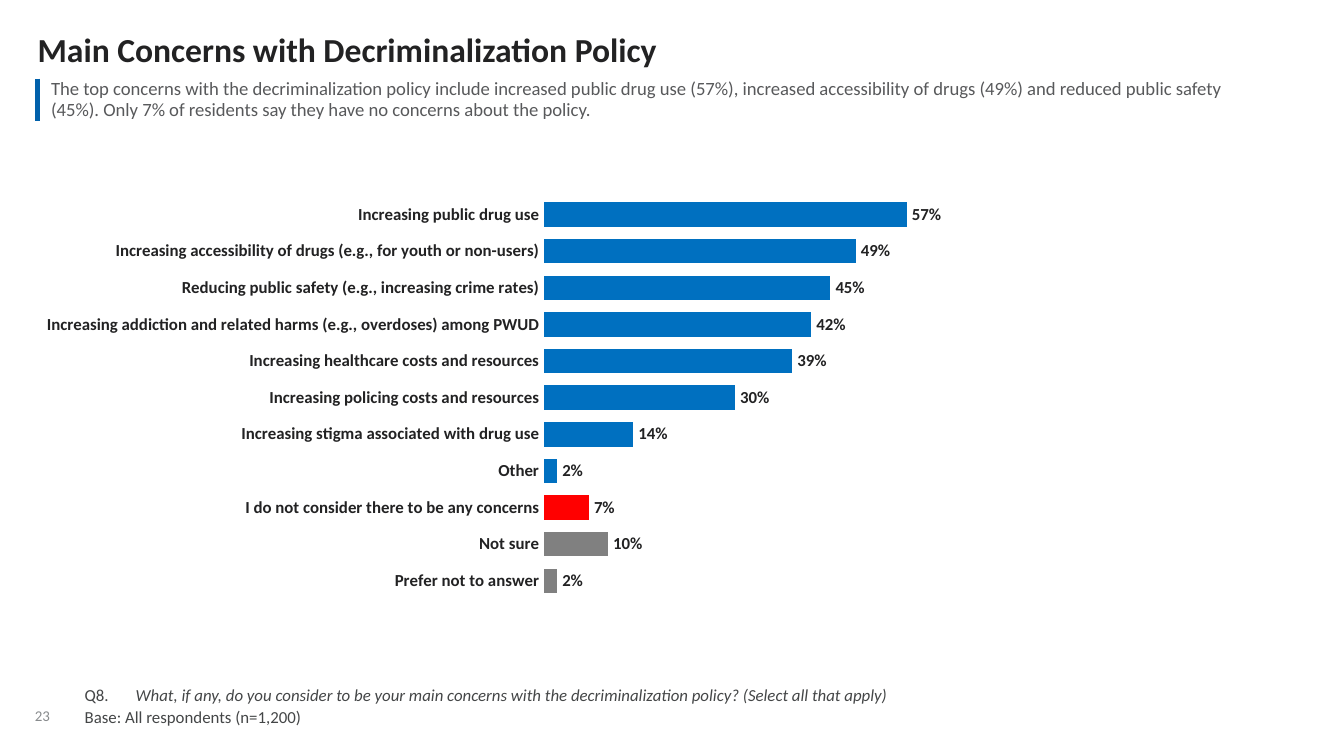
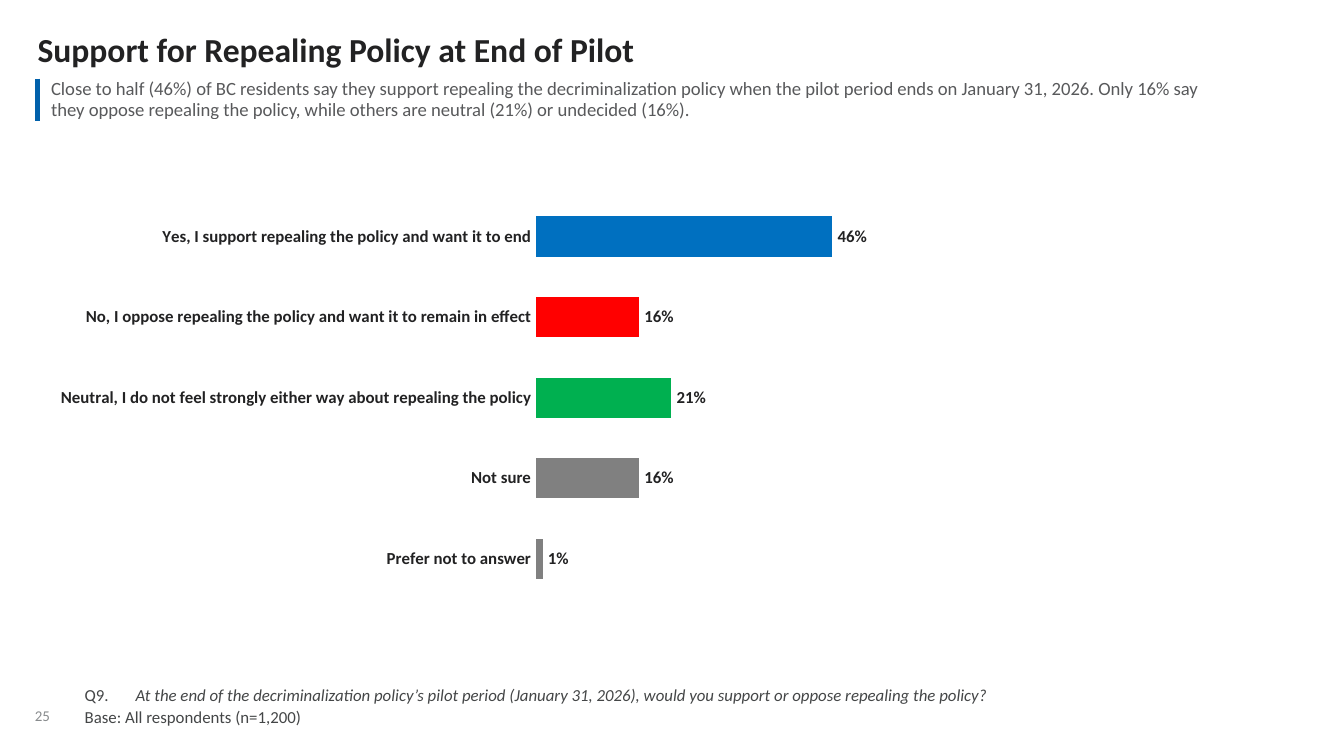
import dataclasses

import lxml.etree
import pptx
import pptx.chart.data
import pptx.dml.color
import pptx.enum.chart
import pptx.enum.text
import pptx.oxml
import pptx.oxml.ns
import pptx.util

Inches = pptx.util.Inches
Pt = pptx.util.Pt
qn = pptx.oxml.ns.qn
Anchor = pptx.enum.text.MSO_ANCHOR


@dataclasses.dataclass(frozen=True)
class Theme:
    font: str = "Calibri"
    ink: str = "222223"
    note: str = "444647"
    lead: str = "58595B"
    page: str = "888B8D"
    bar: str = "0161AB"
    white: str = "FFFFFF"
    blue: str = "0070C0"
    red: str = "FF0000"
    green: str = "00B050"
    gray: str = "808080"
    title_size: int = 18
    lead_size: int = 10
    text_size: int = 9
    page_size: int = 8


THEME = Theme()
LEFT = 0.28
CHART_WIDTH = 8.5
BASE = "Base: All respondents (n=1,200)"


def tint(code):
    return pptx.dml.color.RGBColor.from_string(code)


def style(font, size, color, bold=False, italic=False):
    font.name = THEME.font
    font.size = Pt(size)
    font.color.rgb = tint(color)
    font.bold = bold
    font.italic = italic


def write(para, text, size=THEME.text_size, color=THEME.ink, bold=False,
          italic=False, space=0.9, after=0):
    """Add one run to the paragraph and set its spacing."""
    para.alignment = pptx.enum.text.PP_ALIGN.LEFT
    para.line_spacing = space
    para.space_before = Pt(0)
    para.space_after = Pt(after)
    run = para.add_run()
    run.text = text
    style(run.font, size, color, bold, italic)


def place(shape, left, top, width, height):
    shape.left, shape.top = Inches(left), Inches(top)
    shape.width, shape.height = Inches(width), Inches(height)


def set_frame(frame, anchor, wrap=True):
    """Clear the margins, anchor the text and return the first paragraph."""
    frame.margin_left = frame.margin_right = 0
    frame.margin_top = frame.margin_bottom = 0
    frame.auto_size = pptx.enum.text.MSO_AUTO_SIZE.NONE
    frame.vertical_anchor = anchor
    frame.word_wrap = wrap
    return frame.paragraphs[0]


def add_title(slide, text):
    title = slide.shapes.title
    place(title, LEFT, 0.25, 9.46, 0.27)
    para = set_frame(title.text_frame, Anchor.TOP)
    write(para, text, size=THEME.title_size, bold=True)


def add_page(slide, number):
    box = slide.shapes.add_textbox(
        Inches(0.26), Inches(5.13), Inches(0.34), Inches(0.26))
    para = set_frame(box.text_frame, Anchor.BOTTOM, wrap=False)
    write(para, str(number), size=THEME.page_size, color=THEME.page, space=0.85)


def hang(para):
    """Give the paragraph a hanging indent and no bullet."""
    props = para._p.get_or_add_pPr()
    props.set("marL", str(Inches(0.38)))
    props.set("indent", str(-Inches(0.38)))
    lxml.etree.SubElement(props, qn("a:buNone"))


def add_note(slide, label, question):
    body = slide.placeholders[1]
    place(body, 0.63, 5.1, 8.4, 0.31)
    first = set_frame(body.text_frame, Anchor.BOTTOM)
    last = body.text_frame.add_paragraph()
    hang(first)
    hang(last)
    look = {"color": THEME.note, "after": 2}
    write(first, label + "\t", **look)
    write(first, question, italic=True, **look)
    write(last, BASE, **look)


def edge(cell, tag, index, color, width):
    """Draw one side of a table cell."""
    line = lxml.etree.Element(qn(tag), w=str(Pt(width)))
    fill = lxml.etree.SubElement(line, qn("a:solidFill"))
    lxml.etree.SubElement(fill, qn("a:srgbClr"), val=color)
    cell._tc.get_or_add_tcPr().insert(index, line)


def add_lead(slide, text):
    table = slide.shapes.add_table(
        1, 1, Inches(LEFT), Inches(0.59), Inches(9), Inches(0.2)).table
    table.first_row = table.horz_banding = False
    cell = table.cell(0, 0)
    cell.fill.background()
    cell.margin_left = cell.margin_right = Inches(0.1)
    cell.margin_top = cell.margin_bottom = 0
    cell.vertical_anchor = Anchor.MIDDLE
    edge(cell, "a:lnL", 0, THEME.bar, 3)
    edge(cell, "a:lnR", 1, THEME.white, 1)
    write(cell.text_frame.paragraphs[0], text, size=THEME.lead_size,
          color=THEME.lead, after=3)


def set_plot(chart, start):
    """Let the bars fill the chart from this many inches in."""
    area = chart._chartSpace.chart.plotArea
    for old in area.findall(qn("c:layout")):
        area.remove(old)
    layout = lxml.etree.Element(qn("c:layout"))
    manual = lxml.etree.SubElement(layout, qn("c:manualLayout"))
    share = start / CHART_WIDTH
    parts = {"layoutTarget": "inner", "xMode": "edge", "yMode": "edge",
             "x": share, "y": 0, "w": 1 - share, "h": 1}
    for name, value in parts.items():
        lxml.etree.SubElement(manual, qn("c:" + name), val=str(value))
    area.insert(0, layout)


def set_axes(chart):
    names, scale = chart.category_axis, chart.value_axis
    names.reverse_order = True
    scale.minimum_scale, scale.maximum_scale = 0, 1
    scale.major_unit = 0.2
    scale.tick_label_position = pptx.enum.chart.XL_TICK_LABEL_POSITION.NONE
    for axis in (names, scale):
        axis.has_major_gridlines = False
        axis.major_tick_mark = pptx.enum.chart.XL_TICK_MARK.NONE
        axis.minor_tick_mark = pptx.enum.chart.XL_TICK_MARK.NONE
        axis.format.line.fill.background()


def add_bars(slide, rows, gap, start):
    """Chart rows of (label, percent, color)."""
    data = pptx.chart.data.CategoryChartData(number_format="0%")
    data.categories = [label for label, _, _ in rows]
    data.add_series("Series 1", [share / 100 for _, share, _ in rows])
    chart = slide.shapes.add_chart(
        pptx.enum.chart.XL_CHART_TYPE.BAR_CLUSTERED, Inches(LEFT),
        Inches(1.46), Inches(CHART_WIDTH), Inches(3), data).chart
    chart.has_title = chart.has_legend = False
    style(chart.font, THEME.text_size, THEME.ink, bold=True)
    set_axes(chart)
    set_plot(chart, start)

    plot = chart.plots[0]
    plot.gap_width = gap
    plot.vary_by_categories = False
    plot.has_data_labels = True
    labels = plot.data_labels
    labels.show_value = True
    labels.number_format = "0%"
    labels.number_format_is_linked = False
    labels.position = pptx.enum.chart.XL_LABEL_POSITION.OUTSIDE_END

    series = plot.series[0]
    series.invert_if_negative = False
    series.format.fill.solid()
    series.format.fill.fore_color.rgb = tint(THEME.blue)
    for index, (_, _, color) in enumerate(rows):
        if color != THEME.blue:
            fill = series.points[index].format.fill
            fill.solid()
            fill.fore_color.rgb = tint(color)


def add_slide(deck, page, title, lead, label, question, rows, gap, start):
    slide = deck.slides.add_slide(deck.slide_layouts[1])
    add_page(slide, page)
    add_title(slide, title)
    add_note(slide, label, question)
    add_lead(slide, lead)
    add_bars(slide, rows, gap, start)


def main():
    deck = pptx.Presentation()
    deck.slide_width = Inches(10)
    deck.slide_height = deck.slide_width * 9 // 16
    blue, red, green, gray = THEME.blue, THEME.red, THEME.green, THEME.gray

    add_slide(
        deck, 23, "Main Concerns with Decriminalization Policy",
        "The top concerns with the decriminalization policy include increased "
        "public drug use (57%), increased accessibility of drugs (49%) and "
        "reduced public safety (45%). Only 7% of residents say they have no "
        "concerns about the policy.",
        "Q8.",
        "What, if any, do you consider to be your main concerns with the "
        "decriminalization policy? (Select all that apply)",
        [("Increasing public drug use", 57, blue),
         ("Increasing accessibility of drugs (e.g., for youth or non-users)", 49, blue),
         ("Reducing public safety (e.g., increasing crime rates)", 45, blue),
         ("Increasing addiction and related harms (e.g., overdoses) among PWUD", 42, blue),
         ("Increasing healthcare costs and resources", 39, blue),
         ("Increasing policing costs and resources", 30, blue),
         ("Increasing stigma associated with drug use", 14, blue),
         ("Other", 2, blue),
         ("I do not consider there to be any concerns", 7, red),
         ("Not sure", 10, gray),
         ("Prefer not to answer", 2, gray)],
        gap=50, start=3.77)

    add_slide(
        deck, 25, "Support for Repealing Policy at End of Pilot",
        "Close to half (46%) of BC residents say they support repealing the "
        "decriminalization policy when the pilot period ends on January 31, "
        "2026. Only 16% say they oppose repealing the policy, while others are "
        "neutral (21%) or undecided (16%).",
        "Q9.",
        "At the end of the decriminalization policy’s pilot period (January "
        "31, 2026), would you support or oppose repealing the policy?",
        [("Yes, I support repealing the policy and want it to end", 46, blue),
         ("No, I oppose repealing the policy and want it to remain in effect", 16, red),
         ("Neutral, I do not feel strongly either way about repealing the policy", 21, green),
         ("Not sure", 16, gray),
         ("Prefer not to answer", 1, gray)],
        gap=100, start=3.71)

    deck.save("out.pptx")


if __name__ == "__main__":
    main()
